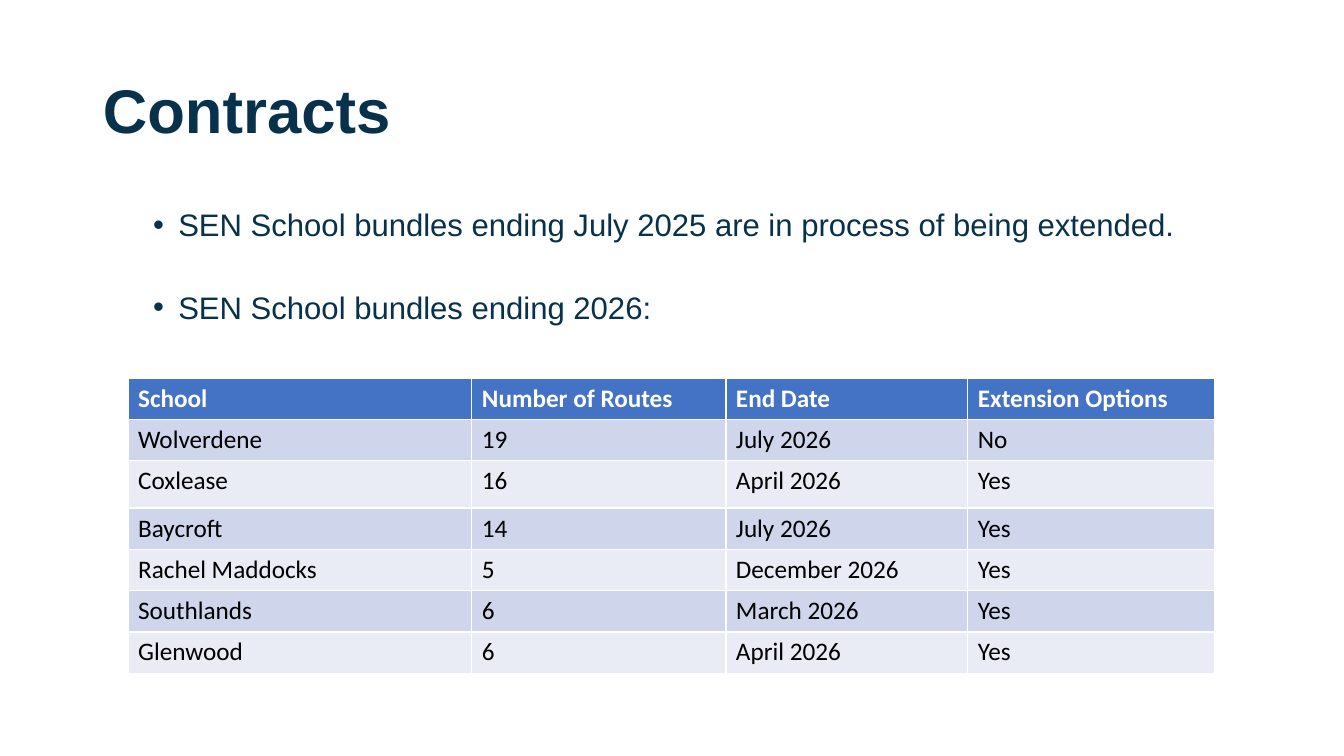
from lxml import etree
from pptx import Presentation
from pptx.dml.color import RGBColor
from pptx.enum.text import MSO_ANCHOR, MSO_AUTO_SIZE, PP_ALIGN
from pptx.oxml.ns import qn
from pptx.util import Inches, Pt

MIDDLE = MSO_ANCHOR.MIDDLE
NO_AUTOFIT = MSO_AUTO_SIZE.NONE
LEFT = PP_ALIGN.LEFT
TITLE_ONLY = 5

NAVY, BLUE, WHITE, BLACK = "08314C", "4472C4", "FFFFFF", "000000"
BANDS = ["CFD5EA", "E9EBF5"]
MARGIN, CONTENT_WIDTH = 0.92, 11.5

BULLETS = [
    "SEN School bundles ending July 2025 are in process of being extended.",
    "SEN School bundles ending 2026:",
]
COLUMN_WIDTHS = [3.41, 2.52, 2.4, 2.45]
ROW_HEIGHT, COXLEASE_HEIGHT = 0.41, 0.47
CONTRACTS = [
    ("School", "Number of Routes", "End Date", "Extension Options"),
    ("Wolverdene", "19", "July 2026", "No"),
    ("Coxlease", "16", "April 2026", "Yes"),
    ("Baycroft", "14", "July 2026", "Yes"),
    ("Rachel Maddocks", "5", "December 2026", "Yes"),
    ("Southlands", "6", "March 2026", "Yes"),
    ("Glenwood", "6", "April 2026", "Yes"),
]


def color(hex_string):
    return RGBColor.from_string(hex_string)


def add_run(paragraph, text, font_name, size, hex_string, bold=False):
    run = paragraph.add_run()
    run.text = text
    run.font.name = font_name
    run.font.size = Pt(size)
    run.font.bold = bold
    run.font.color.rgb = color(hex_string)


presentation = Presentation()
presentation.slide_width = Inches(13.33)
presentation.slide_height = Inches(7.5)
slide = presentation.slides.add_slide(presentation.slide_layouts[TITLE_ONLY])

# Title
title = slide.shapes.title
title.left, title.top = Inches(MARGIN), Inches(0.4)
title.width, title.height = Inches(CONTENT_WIDTH), Inches(1.45)
title.text_frame.auto_size = NO_AUTOFIT
title.text_frame.vertical_anchor = MIDDLE
heading = title.text_frame.paragraphs[0]
heading.alignment = LEFT
heading.line_spacing = 0.9
add_run(heading, "Contracts", "Arial", 44, NAVY, bold=True)

# Bullets
bullet_box = slide.shapes.add_textbox(
    Inches(MARGIN), Inches(2.03), Inches(CONTENT_WIDTH), Inches(1.29))
bullet_frame = bullet_box.text_frame
bullet_frame.word_wrap = True
for index, text in enumerate(BULLETS):
    paragraph = bullet_frame.add_paragraph() if index else bullet_frame.paragraphs[0]
    paragraph.line_spacing = 0.9
    paragraph.space_before = Pt(35 if index else 0)
    properties = paragraph._p.get_or_add_pPr()
    properties.set("marL", str(Inches(0.75)))
    properties.set("indent", str(Inches(-0.25)))
    etree.SubElement(properties, qn("a:buFont")).set("typeface", "Arial")
    etree.SubElement(properties, qn("a:buChar")).set("char", "•")
    add_run(paragraph, text, "Arial", 22.2, NAVY)

# Contracts table
table = slide.shapes.add_table(
    len(CONTRACTS), len(COLUMN_WIDTHS), Inches(1.27), Inches(3.75),
    Inches(sum(COLUMN_WIDTHS)), Inches(ROW_HEIGHT * len(CONTRACTS))).table
for column, width in zip(table.columns, COLUMN_WIDTHS):
    column.width = Inches(width)
for row_index, contract in enumerate(CONTRACTS):
    is_header = row_index == 0
    is_coxlease = contract[0] == "Coxlease"
    table.rows[row_index].height = Inches(COXLEASE_HEIGHT if is_coxlease else ROW_HEIGHT)
    for column_index, text in enumerate(contract):
        cell = table.cell(row_index, column_index)
        cell.fill.solid()
        cell.fill.fore_color.rgb = color(BLUE if is_header else BANDS[(row_index - 1) % 2])
        add_run(cell.text_frame.paragraphs[0], text, "Calibri", 18,
                WHITE if is_header else BLACK, bold=is_header)

presentation.save("out.pptx")
